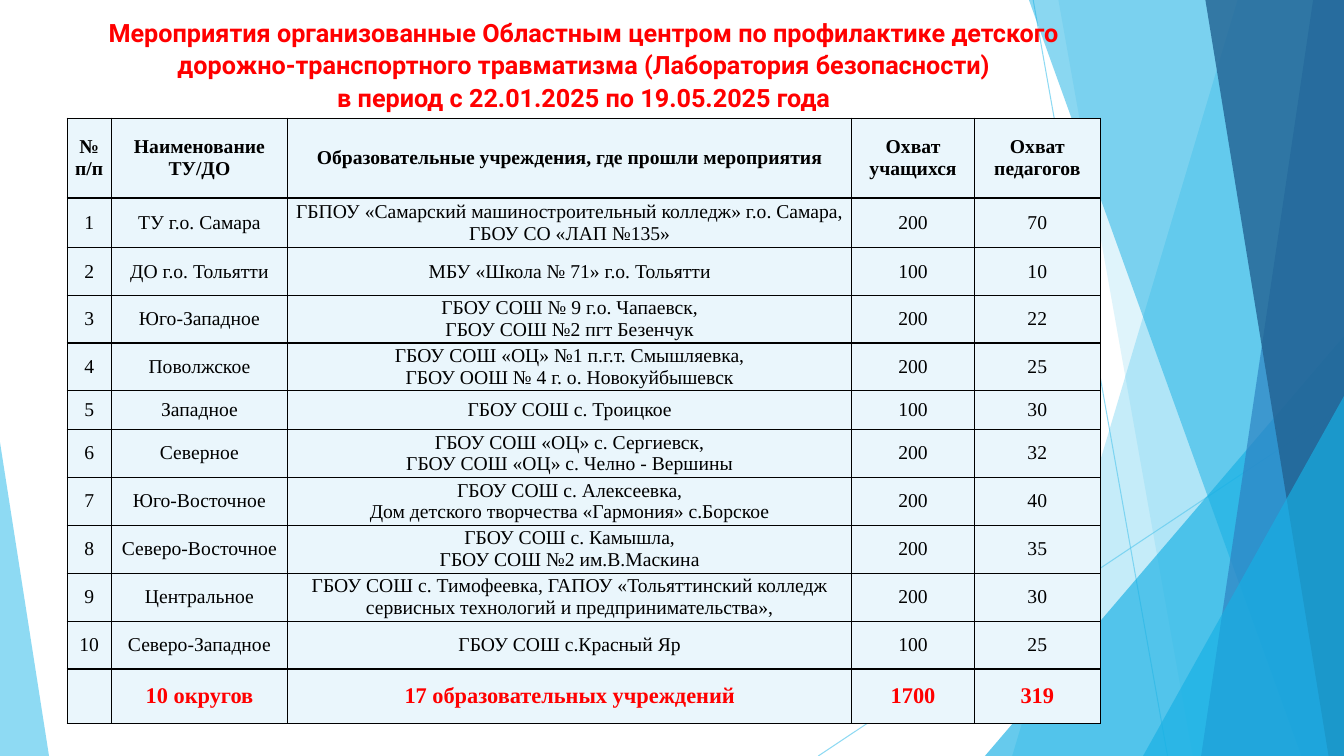
from pptx import Presentation
from pptx import util as u
from pptx.dml.color import RGBColor
from pptx.enum import shapes, text
from pptx.oxml import ns, xmlchemy

SKY = RGBColor(0x5F, 0xCB, 0xEF)
AZURE = RGBColor(0x17, 0xB0, 0xE4)
BLUE = RGBColor(0x2E, 0x83, 0xC3)
NAVY = RGBColor(0x22, 0x62, 0x92)
PALE = RGBColor(0xEA, 0xF6, 0xFC)
RED = RGBColor(0xFF, 0x00, 0x00)
BLACK = RGBColor(0x00, 0x00, 0x00)

TITLE = (
    "Мероприятия организованные Областным центром по профилактике детского\n"
    "дорожно-транспортного травматизма (Лаборатория безопасности)\n"
    "в период с 22.01.2025 по 19.05.2025 года"
)
HEADER = ("№\nп/п", "Наименование ТУ/ДО",
          "Образовательные учреждения, где прошли мероприятия",
          "Охват учащихся", "Охват педагогов")
# District, institutions, pupils, teachers
DISTRICTS = [
    ("ТУ г.о. Самара",
     "ГБПОУ «Самарский машиностроительный колледж» г.о. Самара,\nГБОУ СО «ЛАП №135»", 200, 70),
    ("ДО г.о. Тольятти", "МБУ «Школа № 71» г.о. Тольятти", 100, 10),
    ("Юго-Западное", "ГБОУ СОШ № 9 г.о. Чапаевск,\nГБОУ СОШ №2 пгт Безенчук", 200, 22),
    ("Поволжское",
     "ГБОУ СОШ «ОЦ» №1 п.г.т. Смышляевка,\nГБОУ ООШ № 4 г. о. Новокуйбышевск", 200, 25),
    ("Западное", "ГБОУ СОШ с. Троицкое", 100, 30),
    ("Северное",
     "ГБОУ СОШ «ОЦ» с. Сергиевск,\nГБОУ СОШ «ОЦ» с. Челно - Вершины", 200, 32),
    ("Юго-Восточное",
     "ГБОУ СОШ с. Алексеевка,\nДом детского творчества «Гармония» с.Борское", 200, 40),
    ("Северо-Восточное", "ГБОУ СОШ с. Камышла,\nГБОУ СОШ №2 им.В.Маскина", 200, 35),
    ("Центральное",
     "ГБОУ СОШ с. Тимофеевка, ГАПОУ «Тольяттинский колледж "
     "сервисных технологий и предпринимательства»,", 200, 30),
    ("Северо-Западное", "ГБОУ СОШ с.Красный Яр", 100, 25),
]
TOTAL = ("", "10 округов", "17 образовательных учреждений", "1700", "319")
COLUMNS = (31.5, 126, 403, 87.5, 90)
ROWS = (57, 35.5, 34, 34, 34.25, 27.5) + (34.25,) * 5 + (39,)


def set_alpha(shape, percent):
    for colour in shape._element.iter(ns.qn("a:srgbClr")):
        alpha = xmlchemy.OxmlElement("a:alpha")
        alpha.set("val", str(percent * 1000))
        colour.append(alpha)


def paint(shape, colour, percent):
    shape.shadow.inherit = False
    shape.fill.solid()
    shape.fill.fore_color.rgb = colour
    shape.line.fill.background()
    set_alpha(shape, percent)


def add_ray(page, start, end):
    ray = page.shapes.add_connector(
        shapes.MSO_CONNECTOR.STRAIGHT, *map(u.Pt, start + end))
    ray.line.color.rgb = SKY
    ray.line.width = u.Pt(0.75)
    set_alpha(ray, 70)
    ray._element.spPr.append(xmlchemy.OxmlElement("a:effectLst"))


def add_band(page, box, top_x, bottom_x, colour, percent):
    """Band from a slanted edge to the right side of the box."""
    left, top, width, height = box
    right, bottom = left + width, top + height
    outline = page.shapes.build_freeform(u.Pt(left + top_x), u.Pt(top))
    corners = [(right, top), (right, bottom), (left + bottom_x, bottom)]
    outline.add_line_segments([(u.Pt(x), u.Pt(y)) for x, y in corners], close=True)
    paint(outline.convert_to_shape(), colour, percent)


def add_corner(page, box, x, width, height, apex, colour, percent):
    """Right-angled triangle standing on the bottom of the box."""
    left, top, _, box_height = box
    corner = page.shapes.add_shape(
        shapes.MSO_SHAPE.ISOSCELES_TRIANGLE, u.Pt(left + x),
        u.Pt(top + box_height - height), u.Pt(width), u.Pt(height))
    corner.adjustments[0] = apex
    paint(corner, colour, percent)


def draw_backdrop(page, box):
    left, top, width, height = box
    bottom = top + height
    add_ray(page, (left + 738, top), (left + 834, bottom))
    add_ray(page, (left + width, top + 290), (left + 584.5, bottom))
    add_band(page, box, 884, 723, SKY, 36)
    add_band(page, box, 756, 852, SKY, 20)
    add_corner(page, box, 703.5, 256.5, 300, 1, AZURE, 66)
    add_band(page, box, 735, 929.5, AZURE, 50)
    add_band(page, box, 938, 858, BLUE, 70)
    add_band(page, box, 861, 949, NAVY, 80)
    add_corner(page, box, 816.5, 143.5, 257, 1, AZURE, 66)
    add_corner(page, box, 0, 35, 224, 0, SKY, 70)


def format_text(frame, font, size, colour, bold):
    for para in frame.paragraphs:
        para.alignment = text.PP_ALIGN.CENTER
        for span in para.runs:
            span.font.name = font
            span.font.size = u.Pt(size)
            span.font.bold = bold
            span.font.color.rgb = colour


def draw_title(page, box):
    title = page.shapes.title
    title.left, title.top, title.width, title.height = map(u.Pt, box)
    frame = title.text_frame
    frame.text = TITLE
    frame.word_wrap = True
    frame.auto_size = text.MSO_AUTO_SIZE.NONE
    frame.vertical_anchor = text.MSO_ANCHOR.TOP
    format_text(frame, "Roboto", 18, RED, True)
    for para in frame.paragraphs:
        para.line_spacing = 1.07
        para.space_before = u.Pt(0)
    # Bring the title in front of the backdrop
    title._element.getparent().append(title._element)


def add_borders(cell):
    properties = cell._tc.get_or_add_tcPr()
    for index, side in enumerate(("lnL", "lnR", "lnT", "lnB")):
        border = xmlchemy.OxmlElement("a:" + side)
        border.set("w", str(u.Pt(1)))
        fill = xmlchemy.OxmlElement("a:solidFill")
        colour = xmlchemy.OxmlElement("a:srgbClr")
        colour.set("val", str(BLACK))
        fill.append(colour)
        border.append(fill)
        properties.insert(index, border)


def draw_table(page, box):
    rows = [HEADER]
    rows += [(number, *district) for number, district in enumerate(DISTRICTS, 1)]
    rows.append(TOTAL)
    table = page.shapes.add_table(len(rows), len(COLUMNS), *map(u.Pt, box)).table
    table.first_row = table.horz_banding = False
    for column, width in zip(table.columns, COLUMNS):
        column.width = u.Pt(width)
    for r, (values, height) in enumerate(zip(rows, ROWS)):
        table.rows[r].height = u.Pt(height)
        is_total = values is TOTAL
        for c, value in enumerate(values):
            cell = table.cell(r, c)
            cell.text_frame.text = str(value)
            cell.vertical_anchor = text.MSO_ANCHOR.MIDDLE
            cell.margin_left = cell.margin_right = u.Pt(5)
            cell.margin_top = cell.margin_bottom = 0
            cell.fill.solid()
            cell.fill.fore_color.rgb = PALE
            add_borders(cell)
            format_text(cell.text_frame, "Times New Roman", 16 if is_total else 14,
                        RED if is_total else BLACK, is_total or r == 0)


def main():
    deck = Presentation()
    deck.slide_width, deck.slide_height = u.Pt(960), u.Pt(540)
    page = deck.slides.add_slide(deck.slide_layouts[5])
    draw_backdrop(page, (0, 0, 960, 540))
    draw_title(page, (42.5, 7.2, 749, 99.5))
    draw_table(page, (48, 84.5, sum(COLUMNS), sum(ROWS)))
    deck.save("out.pptx")


if __name__ == "__main__":
    main()
